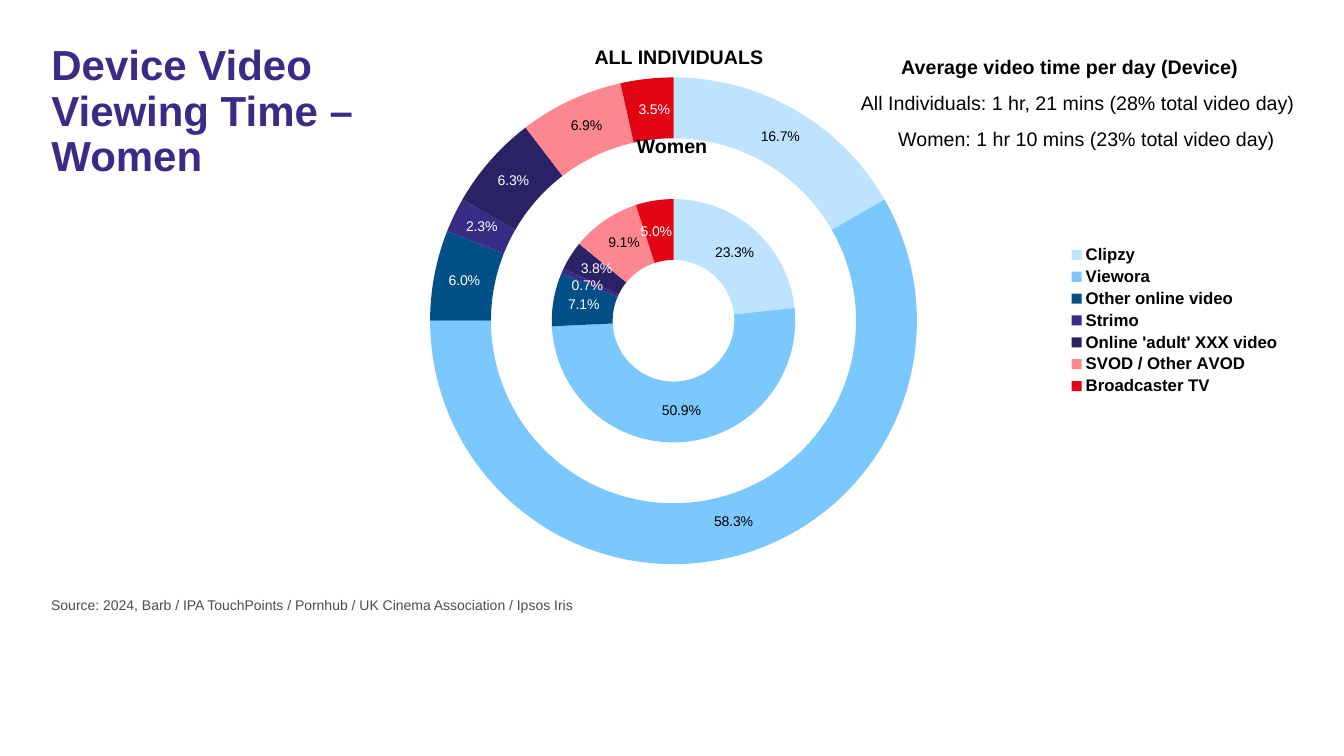
from lxml import etree
from pptx import Presentation
from pptx.chart.data import CategoryChartData
from pptx.dml.color import RGBColor
from pptx.enum import chart as ch, text
from pptx.oxml.ns import qn
from pptx.util import Inches, Pt

TITLE = "Device Video Viewing Time – Women"
SEGMENTS = [
    ("Clipzy", "BDE3FF", "000000", 23.3, 16.7),
    ("Viewora", "7BC8FF", "000000", 50.9, 58.3),
    ("Other online video", "004F87", "FFFFFF", 7.1, 6),
    ("Strimo", "372D87", "FFFFFF", 0.7, 2.3),
    ("Online 'adult' XXX video", "292265", "FFFFFF", 3.8, 6.3),
    ("SVOD / Other AVOD", "FD878F", "000000", 9.1, 6.9),
    ("Broadcaster TV", "E10514", "FFFFFF", 5, 3.5),
]
WOMEN_SHIFTS = {1: (0.01, -0.01), 3: (-0.03, 0.02), 4: (0, -0.03),
                5: (0.02, -0.03), 6: (-0.03, 0.01)}
ALL_SHIFTS = {1: (0.05, -0.05), 3: (0, -0.02), 5: (0.03, -0.02), 6: (0.04, 0.01)}
LEFT, CENTER = text.PP_ALIGN.LEFT, text.PP_ALIGN.CENTER
BLACK = {"size": 14, "color": "000000", "bold": False}
BOLD = {**BLACK, "bold": True}
GREY = {"size": 10, "color": "4D4D4D", "bold": False}
TEXTS = [
    ("All Individuals: 1 hr, 21 mins (28% total video day)", (8.44, 0.85, 4.89, 0.34), LEFT, BLACK),
    ("Women: 1 hr 10 mins (23% total video day)", (8.81, 1.21, 4.19, 0.34), LEFT, BLACK),
    ("Average video time per day (Device)", (8.84, 0.5, 3.82, 0.34), LEFT, BOLD),
    ("ALL INDIVIDUALS", (5.77, 0.4, 1.93, 0.34), CENTER, BOLD),
    ("Women", (5.91, 1.28, 1.51, 0.34), CENTER, BOLD),
    ("Source: 2024, Barb / IPA TouchPoints / Pornhub / UK Cinema Association / Ipsos Iris",
     (0.41, 5.87, 12.4, 0.33), LEFT, GREY),
]
CHART_LEFT, CHART_TOP, CHART_W, CHART_H = 3.21, 0.14, 9.6, 6.08
PLOT_X, PLOT_Y, PLOT_W, PLOT_H = 1.06, 0.58, 4.83, 4.93
HOLE = 47
PERCENT = '0.0"%"'


def rgb(value):
    return RGBColor.from_string(value)


def set_font(font, size, color, bold=False):
    for name, value in {"name": "Arial", "size": Pt(size), "bold": bold}.items():
        setattr(font, name, value)
    font.color.rgb = rgb(color)


def write(sp, content, align, style):
    tf = sp.text_frame
    for name, value in {"word_wrap": True, "auto_size": text.MSO_AUTO_SIZE.NONE,
                        "vertical_anchor": text.MSO_ANCHOR.TOP}.items():
        setattr(tf, name, value)
    p = tf.paragraphs[0]
    p.alignment = align
    r = p.add_run()
    r.text = content
    set_font(r.font, **style)
    return p


def manual_layout(settings):
    layout = etree.Element(qn("c:layout"))
    manual = etree.SubElement(layout, qn("c:manualLayout"))
    for tag, value in settings.items():
        etree.SubElement(manual, qn("c:" + tag), val=str(value))
    return layout


def format_ring(series, shifts):
    labels = series.data_labels
    for name, value in {"show_value": True, "number_format": PERCENT,
                        "number_format_is_linked": False}.items():
        setattr(labels, name, value)
    set_font(labels.font, 10, "FFFFFF")
    for i, (_, fill, label_color, *_) in enumerate(SEGMENTS):
        point = series.points[i]
        point.format.fill.solid()
        point.format.fill.fore_color.rgb = rgb(fill)
        point.format.line.fill.background()
        set_font(point.data_label.font, 10, label_color)
    for label in series._element.iter(qn("c:dLbl")):
        idx = label.find(qn("c:idx"))
        idx.addnext(etree.Element(qn("c:numFmt"), formatCode=PERCENT, sourceLinked="0"))
        shift = shifts.get(int(idx.get("val")))
        if shift:
            dx, dy = shift
            idx.addnext(manual_layout({"x": round(dx / CHART_W, 4), "y": round(dy / CHART_H, 4)}))


def place_plot(chart):
    area = chart._chartSpace.chart.plotArea
    for old in area.findall(qn("c:layout")):
        area.remove(old)
    area.insert(0, manual_layout({
        "layoutTarget": "inner", "xMode": "edge", "yMode": "edge",
        "x": round(PLOT_X / CHART_W, 3), "y": round(PLOT_Y / CHART_H, 3),
        "w": round(PLOT_W / CHART_W, 3), "h": round(PLOT_H / CHART_H, 3)}))
    doughnut = area.find(qn("c:doughnutChart"))
    hole = doughnut.find(qn("c:holeSize"))
    if hole is None:
        hole = etree.SubElement(doughnut, qn("c:holeSize"))
    hole.set("val", str(HOLE))


def add_rings(s):
    names, _, _, women, everyone = zip(*SEGMENTS)
    data = CategoryChartData(number_format="0.0")
    data.categories = names
    for n, values in enumerate((women, [None] * len(names), everyone), 1):
        data.add_series(f"Series {n}", values)
    box = map(Inches, (CHART_LEFT, CHART_TOP, CHART_W, CHART_H))
    chart = s.shapes.add_chart(ch.XL_CHART_TYPE.DOUGHNUT, *box, data).chart
    set_font(chart.font, 18, "000000")
    chart.has_title = False
    chart.has_legend = True
    chart.legend.position = ch.XL_LEGEND_POSITION.RIGHT
    chart.legend.include_in_layout = False
    set_font(chart.legend.font, 12, "000000", True)
    plot = chart.plots[0]
    plot.vary_by_categories = True
    for n, shifts in ((0, WOMEN_SHIFTS), (2, ALL_SHIFTS)):
        format_ring(plot.series[n], shifts)
    place_plot(chart)


def main():
    prs = Presentation()
    prs.slide_width, prs.slide_height = Inches(13.33), Inches(7.5)
    s = prs.slides.add_slide(prs.slide_layouts[5])
    add_rings(s)
    title = s.shapes.title
    title.left, title.top, title.width, title.height = map(Inches, (0.41, 0.39, 3.82, 2.76))
    p = write(title, TITLE, LEFT, {"size": 30, "color": "372D87", "bold": True})
    p.line_spacing = 0.9
    for content, box, align, style in TEXTS:
        write(s.shapes.add_textbox(*map(Inches, box)), content, align, style)
    prs.save("out.pptx")


if __name__ == "__main__":
    main()
